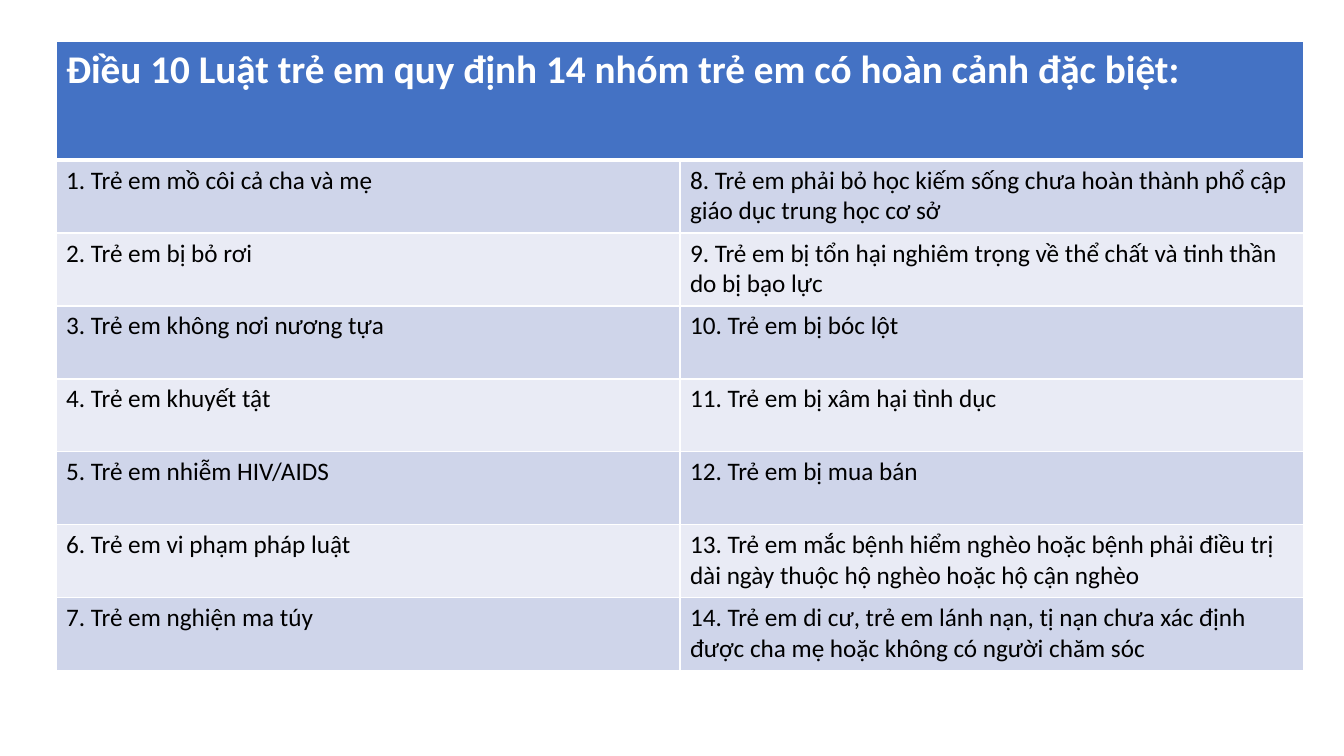
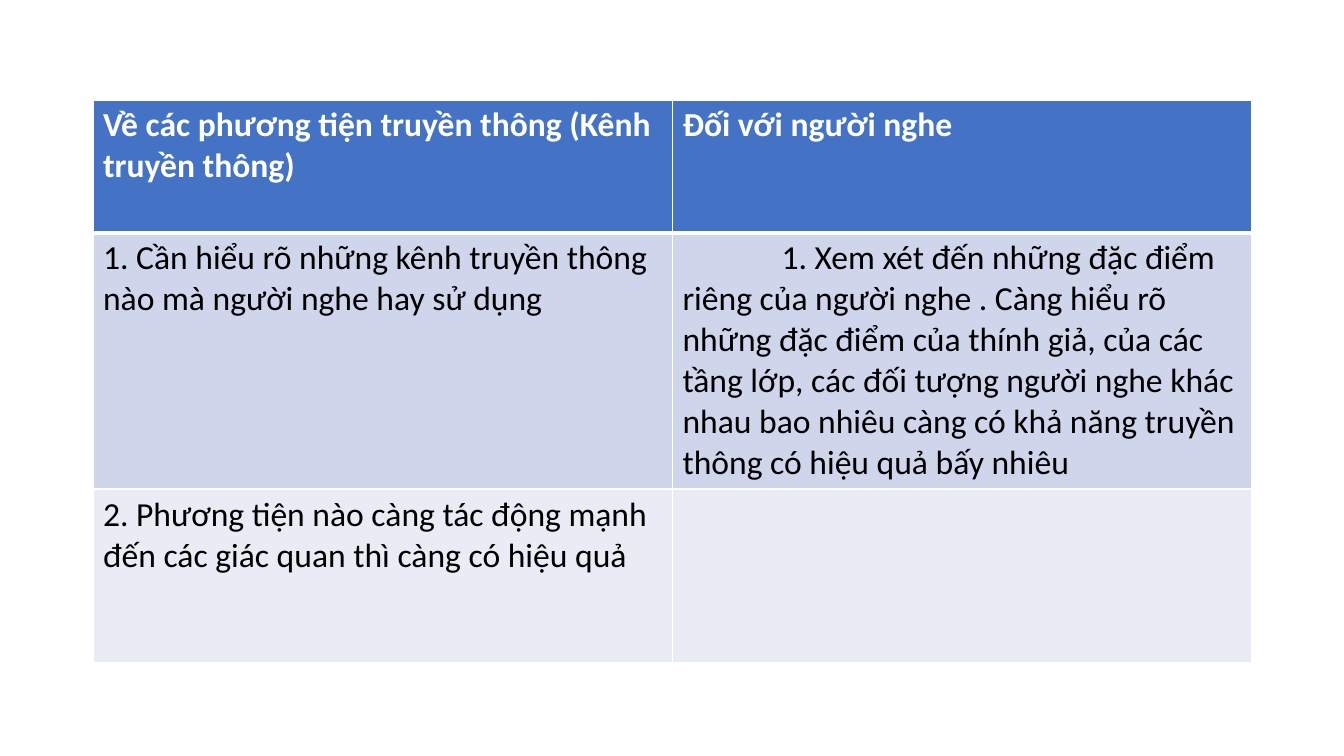
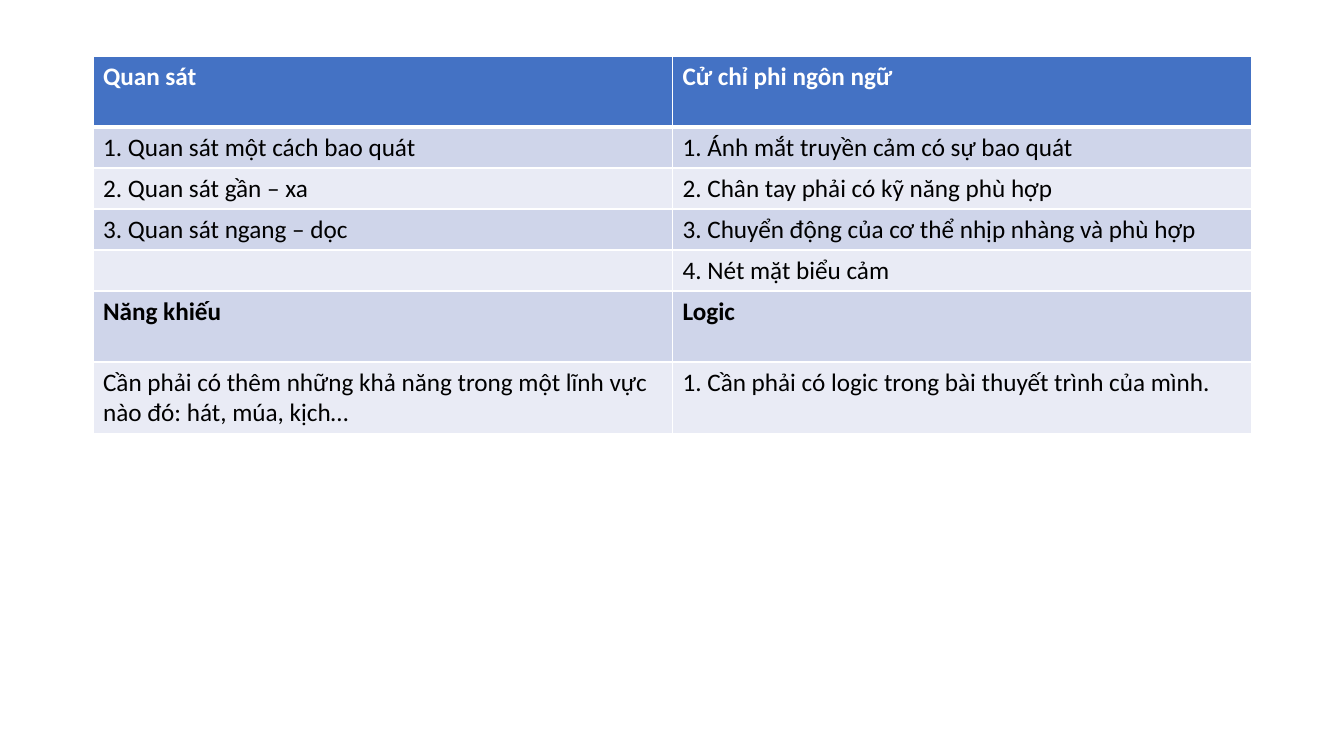
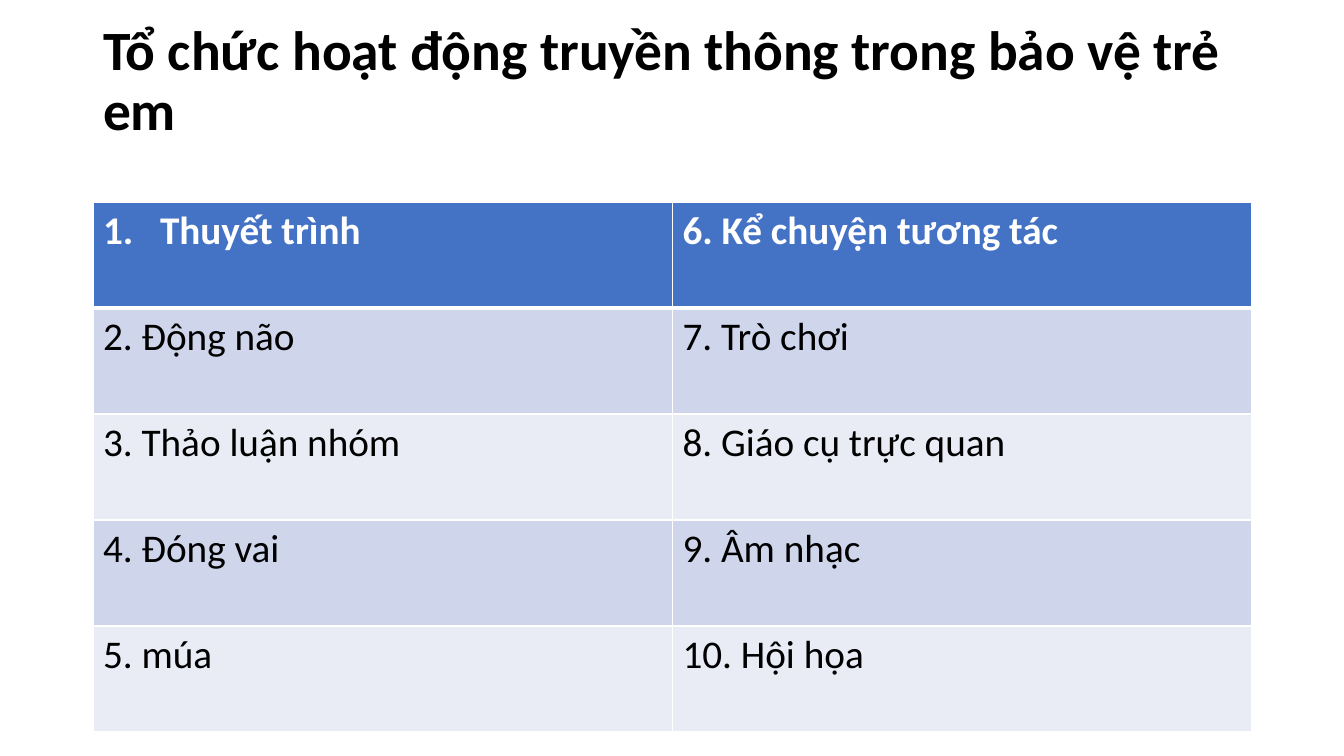
from pptx import Presentation, util as u
from pptx.dml.color import RGBColor
from pptx.enum import text
from pptx.oxml import parse_xml
from pptx.oxml.ns import nsdecls

WHITE = RGBColor(0xFF, 0xFF, 0xFF)
BLACK = RGBColor(0, 0, 0)
BLUE = RGBColor(0x44, 0x72, 0xC4)
BANDS = [RGBColor(0xE9, 0xEB, 0xF5), RGBColor(0xCF, 0xD5, 0xEA)]
FONT = "Calibri"
LEFT, WIDE = 93, 1159


def px(n):
    return u.Emu(round(n * 914400 / 100.8))


def add_grid(slide, left, top, width, highs, rows, head, body, bold=(0,)):
    """Add a two-column banded table; head and body are text sizes."""
    frame = slide.shapes.add_table(len(rows), 2, px(left), px(top),
                                   px(width), px(sum(highs)))
    grid = frame.table
    for r, row in enumerate(rows):
        grid.rows[r].height = px(highs[r])
        for c, words in enumerate(row):
            cell = grid.cell(r, c)
            # Borders go in ahead of the fill
            props = cell._tc.get_or_add_tcPr()
            for side in "LRTB":
                thick = 3 if (r == 0 and side == "B") or (r == 1 and side == "T") else 1
                props.append(parse_xml(
                    f'<a:ln{side} {nsdecls("a")} w="{u.Pt(thick)}"><a:solidFill>'
                    f'<a:srgbClr val="{WHITE}"/></a:solidFill></a:ln{side}>'))
            cell.fill.solid()
            cell.fill.fore_color.rgb = BANDS[r % 2] if r else BLUE
            cell.text = words
            font = cell.text_frame.paragraphs[0].font
            font.name = FONT
            font.size = u.Pt(body if r else head)
            font.bold = r in bold
            font.color.rgb = BLACK if r else WHITE
    return grid


deck = Presentation()
deck.slide_width, deck.slide_height = px(1344), px(756)
bare, titled = deck.slide_layouts[6], deck.slide_layouts[5]

# Slide 1: the groups of children
groups = [
    ("Điều 10 Luật trẻ em quy định 14 nhóm trẻ em có hoàn cảnh đặc biệt:", ""),
    ("1. Trẻ em mồ côi cả cha và mẹ",
     "8. Trẻ em phải bỏ học kiếm sống chưa hoàn thành phổ cập giáo dục trung học cơ sở"),
    ("2. Trẻ em bị bỏ rơi",
     "9. Trẻ em bị tổn hại nghiêm trọng về thể chất và tinh thần do bị bạo lực"),
    ("3. Trẻ em không nơi nương tựa", "10. Trẻ em bị bóc lột"),
    ("4. Trẻ em khuyết tật", "11. Trẻ em bị xâm hại tình dục"),
    ("5. Trẻ em nhiễm HIV/AIDS", "12. Trẻ em bị mua bán"),
    ("6. Trẻ em vi phạm pháp luật",
     "13. Trẻ em mắc bệnh hiểm nghèo hoặc bệnh phải điều trị dài ngày "
     "thuộc hộ nghèo hoặc hộ cận nghèo"),
    ("7. Trẻ em nghiện ma túy",
     "14. Trẻ em di cư, trẻ em lánh nạn, tị nạn chưa xác định được cha mẹ "
     "hoặc không có người chăm sóc"),
]
grid = add_grid(deck.slides.add_slide(bare), 56, 41, 1248, [119] + [73] * 7,
                groups, 28, 18)
grid.cell(0, 0).merge(grid.cell(0, 1))

# Slide 2: channels and listeners
media = [
    ("Về các phương tiện truyền thông (Kênh truyền thông)", "Đối với người nghe"),
    ("1. Cần hiểu rõ những kênh truyền thông nào mà người nghe hay sử dụng",
     "1. Xem xét đến những đặc điểm riêng của người nghe . Càng hiểu rõ những "
     "đặc điểm của thính giả, của các tầng lớp, các đối tượng người nghe khác "
     "nhau bao nhiêu càng có khả năng truyền thông có hiệu quả bấy nhiêu"),
    ("2. Phương tiện nào càng tác động mạnh đến các giác quan thì càng có hiệu quả", ""),
]
grid = add_grid(deck.slides.add_slide(bare), LEFT, 100, WIDE, [133, 256, 174],
                media, 24, 24)
para = grid.cell(1, 1).text_frame.paragraphs[0]
para._p.get_or_add_pPr().set("indent", str(px(99)))

# Slide 3: speaking skills
skills = [
    ("Quan sát", "Cử chỉ phi ngôn ngữ"),
    ("1. Quan sát một cách bao quát", "1. Ánh mắt truyền cảm có sự bao quát"),
    ("2. Quan sát gần – xa", "2. Chân tay phải có kỹ năng phù hợp"),
    ("3. Quan sát ngang – dọc", "3. Chuyển động của cơ thể nhịp nhàng và phù hợp"),
    ("", "4. Nét mặt biểu cảm"),
    ("Năng khiếu", "Logic"),
    ("Cần phải có thêm những khả năng trong một lĩnh vực nào đó: hát, múa, kịch…",
     "1. Cần phải có logic trong bài thuyết trình của mình."),
]
add_grid(deck.slides.add_slide(bare), LEFT, 56, WIDE, [71] + [41] * 4 + [71] * 2,
         skills, 18, 18, bold=(0, 5))

# Slide 4: title
slide = deck.slides.add_slide(titled)
title = slide.shapes.title
title.left, title.top, title.width, title.height = px(LEFT), px(40), px(WIDE), px(146)
frame = title.text_frame
frame.text = "Tổ chức hoạt động truyền thông trong bảo vệ trẻ em"
frame.word_wrap = True
frame.auto_size = text.MSO_AUTO_SIZE.NONE
frame.vertical_anchor = text.MSO_ANCHOR.MIDDLE
frame.margin_bottom = px(66)
para = frame.paragraphs[0]
para.alignment = text.PP_ALIGN.LEFT
para.line_spacing = 0.9
para.font.name, para.font.size, para.font.bold = FONT, u.Pt(39.6), True
para.font.color.rgb = BLACK

# Slide 4: methods
methods = [
    ("Thuyết trình", "6. Kể chuyện tương tác"),
    ("2. Động não", "7. Trò chơi"),
    ("3. Thảo luận nhóm", "8. Giáo cụ trực quan"),
    ("4. Đóng vai", "9. Âm nhạc"),
    ("5. múa", "10. Hội họa"),
]
grid = add_grid(slide, LEFT, 202, WIDE, [106] * 5, methods, 28, 28)
props = grid.cell(0, 0).text_frame.paragraphs[0]._p.get_or_add_pPr()
props.set("marL", str(px(57)))
props.set("indent", str(px(-57)))
props.insert(0, parse_xml(f'<a:buAutoNum {nsdecls("a")} type="arabicPeriod"/>'))

deck.save("out.pptx")
